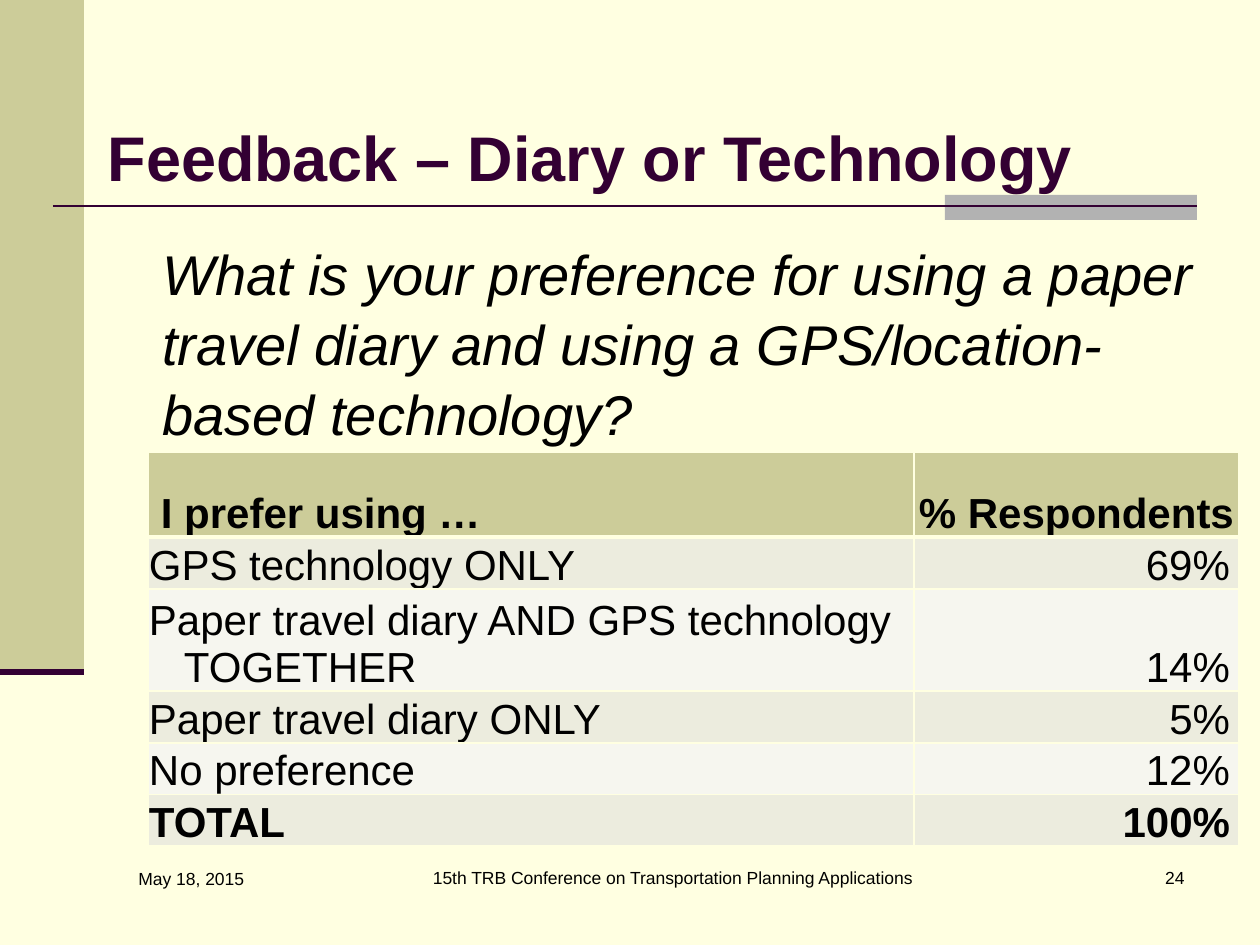
from dataclasses import dataclass

from lxml import etree
from pptx import Presentation
from pptx.dml.color import RGBColor
from pptx.enum.shapes import MSO_CONNECTOR, MSO_SHAPE
from pptx.enum.text import MSO_ANCHOR, MSO_AUTO_SIZE, PP_ALIGN
from pptx.oxml.ns import qn
from pptx.util import Emu, Pt

PX_PER_INCH = 126
TITLE_ONLY = 5
RECTANGLE = MSO_SHAPE.RECTANGLE
STRAIGHT = MSO_CONNECTOR.STRAIGHT
MIDDLE, BOTTOM = MSO_ANCHOR.MIDDLE, MSO_ANCHOR.BOTTOM
LEFT, CENTER, RIGHT = PP_ALIGN.LEFT, PP_ALIGN.CENTER, PP_ALIGN.RIGHT
NO_AUTOFIT = MSO_AUTO_SIZE.NONE


@dataclass(frozen=True)
class Theme:
    font: str = "Arial"
    paper: str = "FFFFE1"
    khaki: str = "CCCC99"
    gray: str = "B2B2B2"
    plum: str = "330033"
    black: str = "000000"
    bands: tuple = ("ECECDE", "F6F6EF")
    title_size: int = 36
    question_size: int = 32
    table_size: int = 24
    footer_size: int = 10
    grid_width: int = 1
    header_rule_width: int = 3


THEME = Theme()

# Each row: height, label lines as (text, indent), value
HEADER = (85, [("I prefer using …", 12)], "% Respondents")
ANSWERS = [
    (52, [("GPS technology ONLY", 0)], "69%"),
    (102, [("Paper travel diary AND GPS technology", 0), ("TOGETHER", 35)], "14%"),
    (52, [("Paper travel diary ONLY", 0)], "5%"),
    (51, [("No preference", 0)], "12%"),
    (51, [("TOTAL", 0)], "100%"),
]


def px(length):
    return Emu(round(length * 914400 / PX_PER_INCH))


def color(code):
    return RGBColor.from_string(code)


def add_span(para, text, size, ink=THEME.black, bold=False, italic=False):
    span = para.add_run()
    span.text = text
    font = span.font
    font.name, font.size = THEME.font, Pt(size)
    font.bold, font.italic = bold, italic
    font.color.rgb = color(ink)


def indent(para, length):
    properties = para._p.get_or_add_pPr()
    properties.set("marL", str(px(length)))
    properties.set("indent", "0")


def add_block(page, left, top, width, height, fill):
    block = page.shapes.add_shape(RECTANGLE, px(left), px(top), px(width), px(height))
    block.shadow.inherit = False
    block.fill.solid()
    block.fill.fore_color.rgb = color(fill)
    block.line.fill.background()


def add_rule(page, left, right, y, width):
    rule = page.shapes.add_connector(STRAIGHT, px(left), px(y), px(right), px(y))
    rule.line.color.rgb = color(THEME.plum)
    rule.line.width = Pt(width)
    etree.SubElement(rule._element.spPr, qn("a:effectLst"))


def add_text(page, left, top, width, height, text, size, align=LEFT, italic=False):
    box = page.shapes.add_textbox(px(left), px(top), px(width), px(height))
    box.text_frame.word_wrap = True
    para = box.text_frame.paragraphs[0]
    para.alignment = align
    add_span(para, text, size, italic=italic)
    return para


def set_title(page, text):
    title = page.shapes.title
    title.left, title.top, title.width, title.height = px(95), px(116), px(1124), px(81)
    frame = title.text_frame
    frame.auto_size = NO_AUTOFIT
    frame.vertical_anchor = MIDDLE
    para = frame.paragraphs[0]
    para.alignment = LEFT
    add_span(para, text, THEME.title_size, THEME.plum, bold=True)


def set_borders(cell, top, bottom):
    properties = cell._tc.get_or_add_tcPr()
    widths = {"lnL": THEME.grid_width, "lnR": THEME.grid_width, "lnT": top, "lnB": bottom}
    for position, (side, width) in enumerate(widths.items()):
        line = etree.Element(qn("a:" + side), w=str(Pt(width)))
        fill = etree.SubElement(line, qn("a:solidFill"))
        etree.SubElement(fill, qn("a:srgbClr"), val=THEME.paper)
        properties.insert(position, line)


def fill_cell(cell, lines, fill, align, bold, right_margin):
    cell.fill.solid()
    cell.fill.fore_color.rgb = color(fill)
    cell.vertical_anchor = BOTTOM
    cell.margin_left = cell.margin_top = px(1)
    cell.margin_right, cell.margin_bottom = px(right_margin), 0
    frame = cell.text_frame
    for number, (text, inset) in enumerate(lines):
        para = frame.add_paragraph() if number else frame.paragraphs[0]
        para.alignment = align
        indent(para, inset)
        add_span(para, text, THEME.table_size, bold=bold)


def add_answer_table(page, left, top, widths):
    rows = [HEADER] + ANSWERS
    height = sum(row[0] for row in rows)
    frame = page.shapes.add_table(len(rows), len(widths), px(left), px(top),
                                  px(sum(widths)), px(height))
    table = frame.table
    table.horz_banding = False
    for column, width in zip(table.columns, widths):
        column.width = px(width)
    for number, (row_height, label, value) in enumerate(rows):
        table.rows[number].height = px(row_height)
        is_header = number == 0
        bold = number in (0, len(rows) - 1)
        fill = THEME.khaki if is_header else THEME.bands[(number - 1) % 2]
        label_cell, value_cell = table.rows[number].cells
        fill_cell(label_cell, label, fill, LEFT, bold, 1)
        fill_cell(value_cell, [(value, 0)], fill, CENTER if is_header else RIGHT,
                  bold, 1 if is_header else 9)
        above = THEME.header_rule_width if number == 1 else THEME.grid_width
        below = THEME.header_rule_width if is_header else THEME.grid_width
        for cell in (label_cell, value_cell):
            set_borders(cell, above, below)


def main():
    deck = Presentation()
    deck.slide_width, deck.slide_height = px(1260), px(945)
    page = deck.slides.add_slide(deck.slide_layouts[TITLE_ONLY])
    page.background.fill.solid()
    page.background.fill.fore_color.rgb = color(THEME.paper)

    # Side band, accent block and rules
    add_block(page, 0, 0, 84, 672, THEME.khaki)
    add_block(page, 945, 195, 252, 25, THEME.gray)
    add_rule(page, 53, 1197, 206, 1.5)
    add_rule(page, 0, 84, 672, 3.5)

    # Title and survey question
    set_title(page, "Feedback – Diary or Technology")
    question = add_text(
        page, 87, 231, 1173, 267,
        "What is your preference for using a paper travel diary "
        "and using a GPS/location-based technology?",
        THEME.question_size, italic=True)
    indent(question, 63)
    question.line_spacing = 1.04
    question.space_before = Pt(2)

    # Survey answers
    add_answer_table(page, 148, 452, (766, 325))

    # Footer
    size = THEME.footer_size
    add_text(page, 126, 862, 273, 63, "May 18, 2015", size)
    add_text(page, 179, 861, 987, 63,
             "15th TRB Conference on Transportation Planning Applications", size, CENTER)
    add_text(page, 935, 861, 262, 63, "24", size, RIGHT)

    deck.save("out.pptx")


if __name__ == "__main__":
    main()
